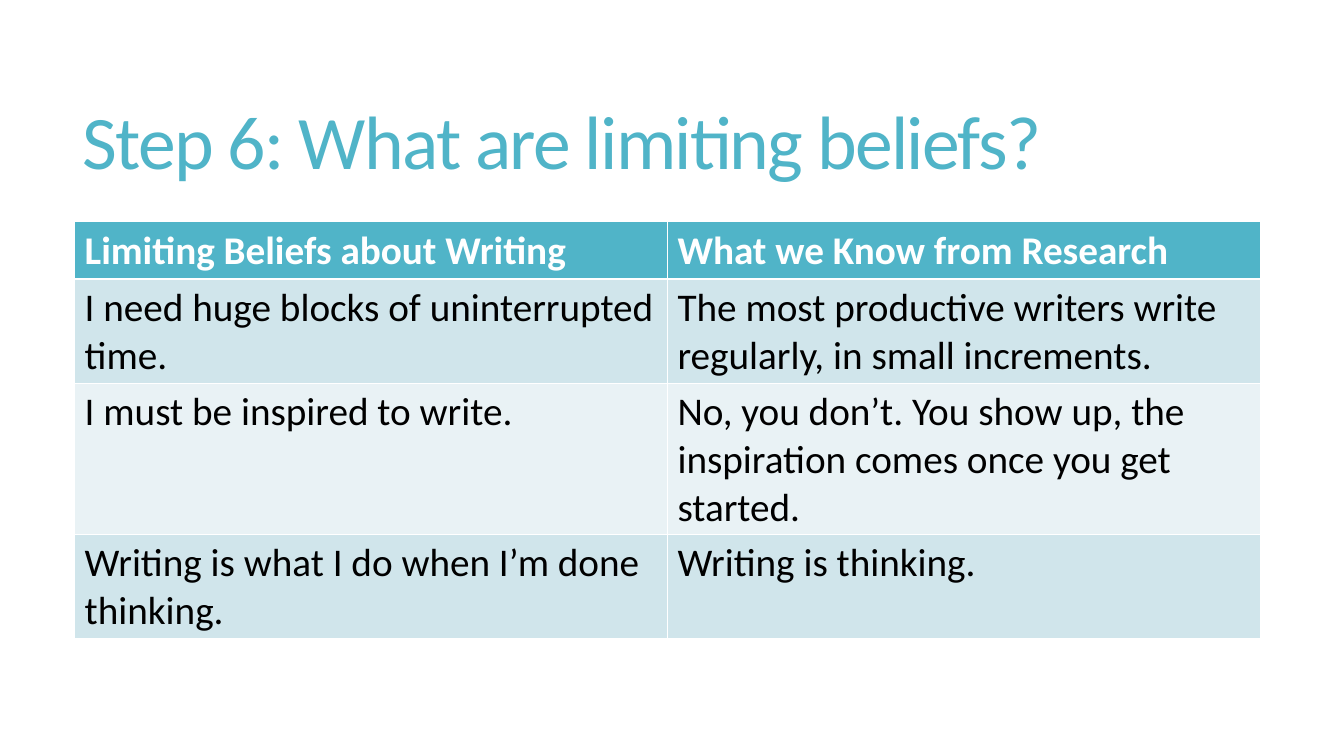
from pptx import Presentation
from pptx.dml.color import RGBColor
from pptx.enum.text import MSO_ANCHOR as Anchor
from pptx.util import Pt

TITLE = "Step 6: What are limiting beliefs?"
BELIEFS = [
    ("Limiting Beliefs about Writing", "What we Know from Research"),
    ("I need huge blocks of uninterrupted time.",
     "The most productive writers write regularly, in small increments."),
    ("I must be inspired to write.",
     "No, you don’t. You show up, the inspiration comes once you get started."),
    ("Writing is what I do when I’m done thinking.", "Writing is thinking."),
]

PX = 9144  # EMU per px, 100 px to the inch
SLIDE_SIZE = (1333, 750)
TITLE_BOX = (72, 55, 1178, 181)
TABLE_BOX = (74, 220, 1176, 413)
ROW_HEIGHT = 41  # least height, rows grow with their text

TEAL = "50B4C8"
BANDS = ("D0E5EB", "E9F2F5")
TITLE_FONT = {"name": "Calibri", "size": Pt(54), "color": TEAL}
HEADER_FONT = {"name": "Calibri", "size": Pt(28), "bold": True, "color": "FFFFFF"}
BODY_FONT = {**HEADER_FONT, "bold": False, "color": "000000"}


def emu(lengths):
    return [length * PX for length in lengths]


def rgb(color):
    return RGBColor.from_string(color)


def write(paragraph, text, font_format):
    run = paragraph.add_run()
    run.text = text
    for name, value in font_format.items():
        if name == "color":
            run.font.color.rgb = rgb(value)
        else:
            setattr(run.font, name, value)
    return run


def add_title(slide):
    frame = slide.shapes.add_textbox(*emu(TITLE_BOX)).text_frame
    frame.word_wrap = True
    frame.vertical_anchor = Anchor.MIDDLE
    paragraph = frame.paragraphs[0]
    paragraph.line_spacing = 0.85
    run = write(paragraph, TITLE, TITLE_FONT)
    run.font._element.set("spc", "-120")


def add_beliefs_table(slide):
    """The default table style supplies the white rules between cells."""
    graphic = slide.shapes.add_table(len(BELIEFS), len(BELIEFS[0]), *emu(TABLE_BOX))
    table = graphic.table
    for index, texts in enumerate(BELIEFS):
        table.rows[index].height = ROW_HEIGHT * PX
        fill = BANDS[(index - 1) % 2] if index else TEAL
        font_format = BODY_FONT if index else HEADER_FONT
        for column, text in enumerate(texts):
            cell = table.cell(index, column)
            cell.fill.solid()
            cell.fill.fore_color.rgb = rgb(fill)
            write(cell.text_frame.paragraphs[0], text, font_format)
    graphic.height = TABLE_BOX[3] * PX


def main():
    presentation = Presentation()
    presentation.slide_width, presentation.slide_height = emu(SLIDE_SIZE)
    slide = presentation.slides.add_slide(presentation.slide_layouts[6])
    add_title(slide)
    add_beliefs_table(slide)
    presentation.save("out.pptx")


if __name__ == "__main__":
    main()
